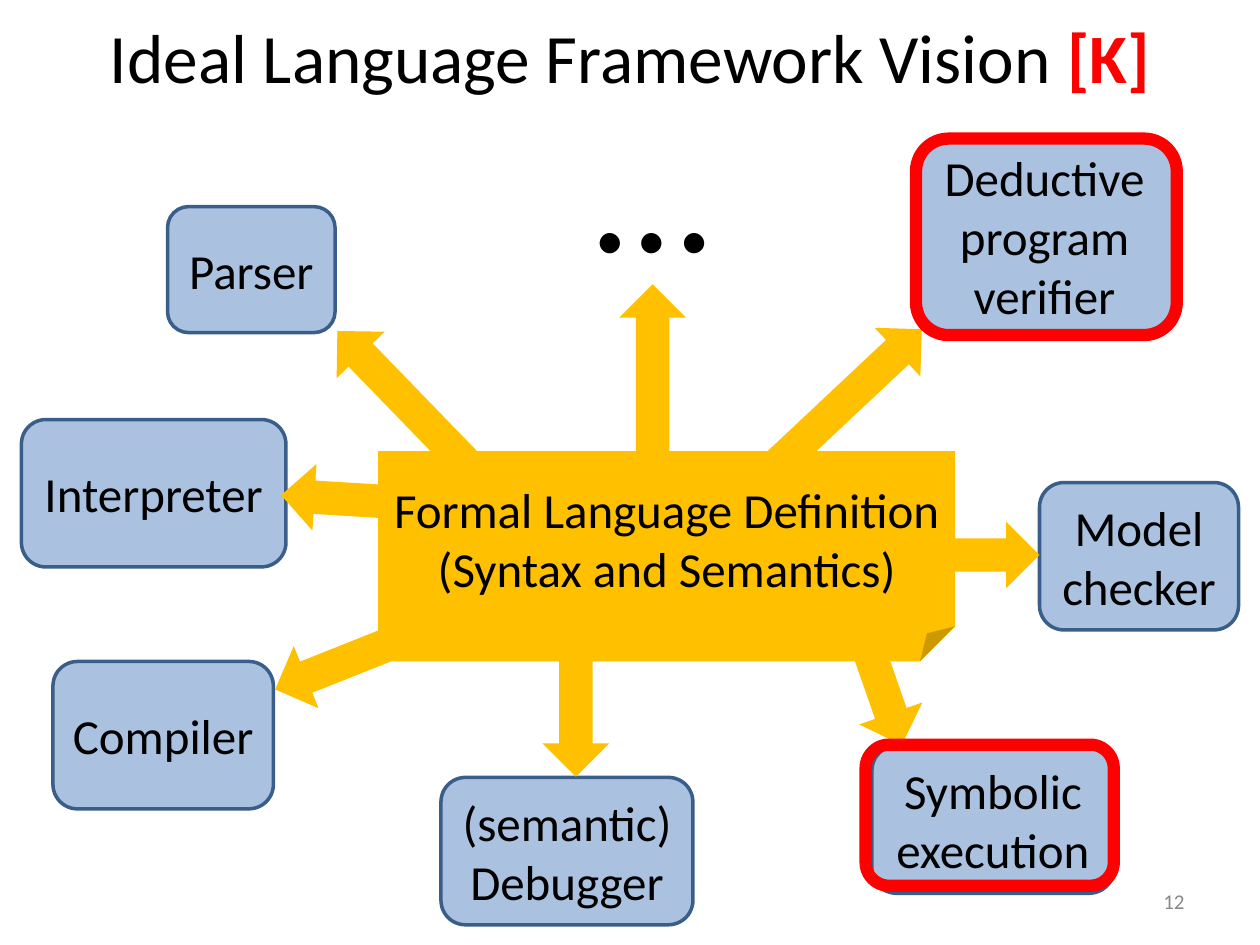
from dataclasses import dataclass

from lxml.etree import SubElement
from pptx import Presentation
from pptx.dml.color import RGBColor
from pptx.enum.shapes import MSO_SHAPE
from pptx.enum.text import MSO_ANCHOR, MSO_AUTO_SIZE, PP_ALIGN
from pptx.oxml.ns import qn
from pptx.util import Inches, Pt


@dataclass(frozen=True)
class Theme:
    font: str = "Calibri"
    text: RGBColor = RGBColor(0x00, 0x00, 0x00)
    muted: RGBColor = RGBColor(0x88, 0x88, 0x88)
    highlight: RGBColor = RGBColor(0xFF, 0x00, 0x00)
    tool_fill: RGBColor = RGBColor(0x4F, 0x81, 0xBD)
    tool_line: RGBColor = RGBColor(0x39, 0x5E, 0x89)
    tool_opacity: int = 48
    gold: RGBColor = RGBColor(0xFF, 0xC0, 0x00)
    title_size: float = 39.6
    label_size: float = 28
    ellipsis_size: float = 96
    number_size: float = 12
    tool_border: float = 2
    highlight_border: float = 7


THEME = Theme()
ARROW_HEIGHT = 0.53

# Label, tool box, then the arrow's left, top, width and rotation
TOOLS = [
    ("Deductive program verifier", (7.25, 1.08, 2.08, 1.58), (5.57, 3.04, 2.02, 316.8)),
    ("Parser", (1.33, 1.64, 1.33, 1), (2.45, 2.9, 1.5, 225.9)),
    ("Interpreter", (0.17, 3.33, 2.1, 1.17), (2.23, 3.71, 1.48, 183.5)),
    ("Compiler", (0.42, 5.25, 1.75, 1.17), (2.13, 4.93, 1.5, 158.3)),
    ("(semantic) Debugger", (3.5, 6.17, 2, 1.17), (3.82, 5.15, 1.5, 90)),
    ("Symbolic execution", (6.92, 5.92, 1.92, 1.17), (6.16, 4.94, 1.5, 70.8)),
    ("Model checker", (8.25, 3.83, 1.58, 1.17), (6.75, 4.14, 1.5, 0)),
]
HIGHLIGHTS = [(7.27, 1.1, 2.07, 1.56), (6.87, 5.91, 1.97, 1.12)]


def write_text(shape, lines, size, color=THEME.text,
               align=PP_ALIGN.CENTER, anchor=MSO_ANCHOR.MIDDLE):
    frame = shape.text_frame
    frame.word_wrap = True
    frame.vertical_anchor = anchor
    frame.text = "\n".join(lines)
    for paragraph in frame.paragraphs:
        paragraph.alignment = align
        paragraph.font.name = THEME.font
        paragraph.font.size = Pt(size)
        paragraph.font.color.rgb = color


def add_shape(slide, kind, box, fill=None, line=None, line_width=0):
    shape = slide.shapes.add_shape(kind, *map(Inches, box))
    shape.shadow.inherit = False
    if fill is None:
        shape.fill.background()
    else:
        shape.fill.solid()
        shape.fill.fore_color.rgb = fill
    if line is None:
        shape.line.fill.background()
    else:
        shape.line.color.rgb = line
        shape.line.width = Pt(line_width)
    return shape


def set_opacity(shape, percent):
    color = shape.fill._xPr.find(qn("a:solidFill"))[0]
    SubElement(color, qn("a:alpha")).set("val", str(percent * 1000))


def add_tool(slide, label, box):
    shape = add_shape(slide, MSO_SHAPE.ROUNDED_RECTANGLE, box,
                      THEME.tool_fill, THEME.tool_line, THEME.tool_border)
    set_opacity(shape, THEME.tool_opacity)
    write_text(shape, [label], THEME.label_size)


def add_arrow(slide, left, top, width, rotation):
    arrow = add_shape(slide, MSO_SHAPE.RIGHT_ARROW,
                      (left, top, width, ARROW_HEIGHT), THEME.gold)
    arrow.rotation = rotation


def add_highlight(slide, box):
    add_shape(slide, MSO_SHAPE.ROUNDED_RECTANGLE, box,
              line=THEME.highlight, line_width=THEME.highlight_border)


def add_label(slide, text, box, size, **style):
    write_text(slide.shapes.add_textbox(*map(Inches, box)), [text], size, **style)


def add_title(slide, text, tag):
    title = slide.shapes.title
    title.left, title.top, title.width, title.height = map(Inches, (0.5, -0.03, 9, 0.95))
    write_text(title, [text], THEME.title_size)
    title.text_frame.auto_size = MSO_AUTO_SIZE.NONE
    run = title.text_frame.paragraphs[0].add_run()
    run.text = tag
    run.font.bold = True
    run.font.color.rgb = THEME.highlight


def main():
    presentation = Presentation()
    presentation.slide_width, presentation.slide_height = Inches(10), Inches(7.5)
    slide = presentation.slides.add_slide(presentation.slide_layouts[5])
    add_title(slide, "Ideal Language Framework Vision ", "[K]")

    # Tools derived from the definition
    for label, box, arrow in TOOLS:
        add_tool(slide, label, box)
        add_arrow(slide, *arrow)

    # Central definition, covering the arrow tails
    definition = add_shape(slide, MSO_SHAPE.FOLDED_CORNER, (3, 3.58, 4.58, 1.67), THEME.gold)
    write_text(definition, ["Formal Language Definition", "(Syntax and Semantics)"],
               THEME.label_size)

    # Slide number
    add_label(slide, "12", (7.17, 6.95, 2.33, 0.4), THEME.number_size,
              color=THEME.muted, align=PP_ALIGN.RIGHT)

    # Further tools
    add_label(slide, "…", (4.62, 0.62, 1.13, 1.72), THEME.ellipsis_size,
              align=PP_ALIGN.LEFT, anchor=MSO_ANCHOR.TOP)
    add_arrow(slide, 4.39, 2.78, 1.58, 270)

    # Red frames around the tools in focus
    for box in HIGHLIGHTS:
        add_highlight(slide, box)

    presentation.save("out.pptx")


if __name__ == "__main__":
    main()
